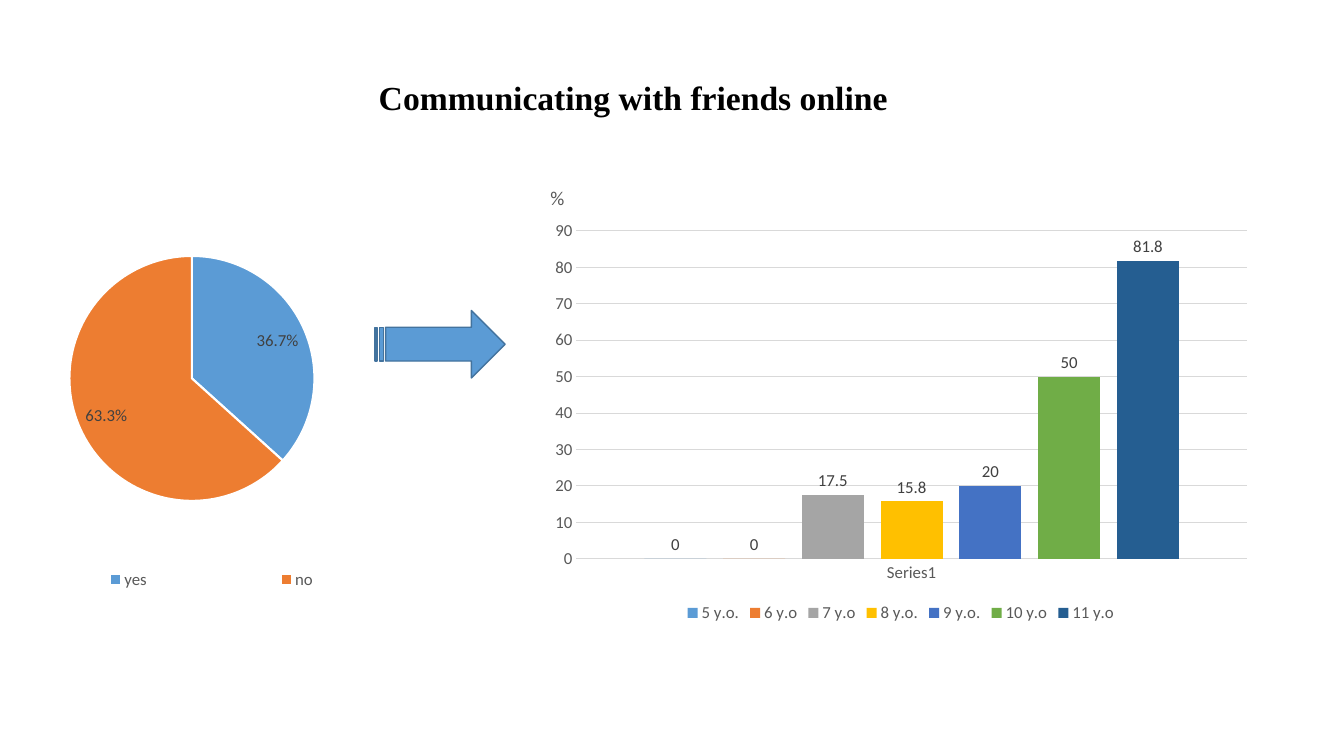
"""Build the slide on communicating with friends online."""
from lxml import etree
from pptx import Presentation
from pptx import util as u
from pptx.chart import data as d
from pptx.dml.color import RGBColor
from pptx.enum import chart as c
from pptx.enum import shapes, text
from pptx.oxml import ns

BLACK = RGBColor(0x00, 0x00, 0x00)
WHITE = RGBColor(0xFF, 0xFF, 0xFF)
GREY_TEXT = RGBColor(0x59, 0x59, 0x59)
DARK_TEXT = RGBColor(0x40, 0x40, 0x40)
GRID = RGBColor(0xD9, 0xD9, 0xD9)
BLUE = RGBColor(0x5B, 0x9B, 0xD5)
ORANGE = RGBColor(0xED, 0x7D, 0x31)
GREY = RGBColor(0xA5, 0xA5, 0xA5)
YELLOW = RGBColor(0xFF, 0xC0, 0x00)
INDIGO = RGBColor(0x44, 0x72, 0xC4)
GREEN = RGBColor(0x70, 0xAD, 0x47)
NAVY = RGBColor(0x25, 0x5E, 0x91)
ARROW_LINE = RGBColor(0x43, 0x73, 0x9E)

ANSWERS = [("yes", 36.7, BLUE), ("no", 63.3, ORANGE)]
AGES = [
    ("5 y.o.", 0, BLUE),
    ("6 y.o", 0, ORANGE),
    ("7 y.o", 17.5, GREY),
    ("8 y.o.", 15.8, YELLOW),
    ("9 y.o.", 20, INDIGO),
    ("10 y.o", 50, GREEN),
    ("11 y.o", 81.8, NAVY),
]


class SlideBuilder:
    """Hold the style and the current slide."""

    heading_font = "Times New Roman"
    body_font = "Calibri"
    chart_size = 12

    def __init__(self, presentation):
        self.slide = presentation.slides.add_slide(presentation.slide_layouts[5])

    def box(self, left, top, width, height):
        return [u.Inches(value) for value in (left, top, width, height)]

    def style_font(self, font, size, color, name=None, bold=False):
        font.name = name or self.body_font
        font.size = u.Pt(size)
        font.bold = bold
        font.color.rgb = color

    def title(self, words, bounds):
        shape = self.slide.shapes.title
        shape.left, shape.top, shape.width, shape.height = self.box(*bounds)
        shape.text_frame.vertical_anchor = text.MSO_ANCHOR.MIDDLE
        paragraph = shape.text_frame.paragraphs[0]
        paragraph.alignment = text.PP_ALIGN.CENTER
        run = paragraph.add_run()
        run.text = words
        self.style_font(run.font, 24, BLACK, self.heading_font, True)

    def label(self, words, bounds):
        shape = self.slide.shapes.add_textbox(*self.box(*bounds))
        shape.text_frame.word_wrap = True
        run = shape.text_frame.paragraphs[0].add_run()
        run.text = words
        self.style_font(run.font, 14, GREY_TEXT)

    def arrow(self, bounds):
        shape = self.slide.shapes.add_shape(
            shapes.MSO_SHAPE.STRIPED_RIGHT_ARROW, *self.box(*bounds))
        shape.shadow.inherit = False
        shape.fill.solid()
        shape.fill.fore_color.rgb = BLUE
        shape.line.color.rgb = ARROW_LINE
        shape.line.width = u.Pt(1)

    def place(self, element, index, fractions, inner=False):
        for old in element.findall(ns.qn("c:layout")):
            element.remove(old)
        layout = etree.Element(ns.qn("c:layout"))
        manual = etree.SubElement(layout, ns.qn("c:manualLayout"))
        settings = [("layoutTarget", "inner")] if inner else []
        settings += [("xMode", "edge"), ("yMode", "edge")]
        settings += zip("xywh", fractions)
        for tag, value in settings:
            etree.SubElement(manual, ns.qn(f"c:{tag}")).set("val", str(value))
        element.insert(index, layout)

    def chart(self, kind, chart_data, bounds, plot_area):
        frame = self.slide.shapes.add_chart(kind, *self.box(*bounds), chart_data)
        chart = frame.chart
        chart.has_title = False
        self.style_font(chart.font, 10, BLACK)
        chart.has_legend = True
        chart.legend.position = c.XL_LEGEND_POSITION.BOTTOM
        chart.legend.include_in_layout = False
        self.style_font(chart.legend.font, self.chart_size, GREY_TEXT)
        plot_element = chart._chartSpace.chart.plotArea
        self.place(plot_element, 0, plot_area, inner=True)
        return chart

    def data_labels(self, plot, number_format, position):
        plot.has_data_labels = True
        labels = plot.data_labels
        labels.show_value = True
        labels.number_format = number_format
        labels.number_format_is_linked = False
        labels.position = position
        self.style_font(labels.font, self.chart_size, DARK_TEXT)

    def pie(self, answers, bounds):
        chart_data = d.CategoryChartData()
        chart_data.categories = [name for name, _, _ in answers]
        chart_data.add_series("Series 1", [value for _, value, _ in answers])
        chart = self.chart(c.XL_CHART_TYPE.PIE, chart_data, bounds,
                           (0.264, 0.174, 0.493, 0.572))
        self.place(chart.legend._element, 1, (0.14, 0.89, 0.81, 0.08))
        plot = chart.plots[0]
        plot.vary_by_categories = True
        self.data_labels(plot, '0.0"%"', c.XL_LABEL_POSITION.INSIDE_END)
        for index, (_, _, color) in enumerate(answers):
            style = plot.series[0].points[index].format
            style.fill.solid()
            style.fill.fore_color.rgb = color
            style.line.color.rgb = WHITE
            style.line.width = u.Pt(1.5)

    def columns(self, ages, bounds):
        chart_data = d.CategoryChartData()
        chart_data.categories = ["Series1"]
        for name, value, _ in ages:
            chart_data.add_series(name, [value])
        chart = self.chart(c.XL_CHART_TYPE.COLUMN_CLUSTERED, chart_data, bounds,
                           (0.05, 0.044, 0.93, 0.792))
        plot = chart.plots[0]
        plot.vary_by_categories = False
        plot.gap_width = 219
        plot.overlap = -27
        self.data_labels(plot, "General", c.XL_LABEL_POSITION.OUTSIDE_END)
        for series, (_, _, color) in zip(plot.series, ages):
            series.format.fill.solid()
            series.format.fill.fore_color.rgb = color
        for axis in (chart.category_axis, chart.value_axis):
            axis.major_tick_mark = c.XL_TICK_MARK.NONE
            axis.minor_tick_mark = c.XL_TICK_MARK.NONE
            self.style_font(axis.tick_labels.font, self.chart_size, GREY_TEXT)
        axis = chart.value_axis
        axis.minimum_scale, axis.maximum_scale, axis.major_unit = 0, 90, 10
        axis.format.line.fill.background()
        for style in (chart.category_axis.format, axis.major_gridlines.format):
            style.line.color.rgb = GRID
            style.line.width = u.Pt(0.75)


def main():
    presentation = Presentation()
    presentation.slide_width = u.Inches(13.33)
    presentation.slide_height = u.Inches(7.5)
    builder = SlideBuilder(presentation)
    builder.title("Communicating with friends online", (1.98, 0.71, 8.6, 0.5))
    builder.pie(ANSWERS, (-0.97, 1.8, 5.63, 4.25))
    builder.columns(AGES, (5.36, 2.11, 7.15, 4.11))
    builder.label("%", (5.36, 1.8, 0.43, 0.34))
    builder.arrow((3.72, 3.08, 1.29, 0.67))
    presentation.save("out.pptx")


if __name__ == "__main__":
    main()
